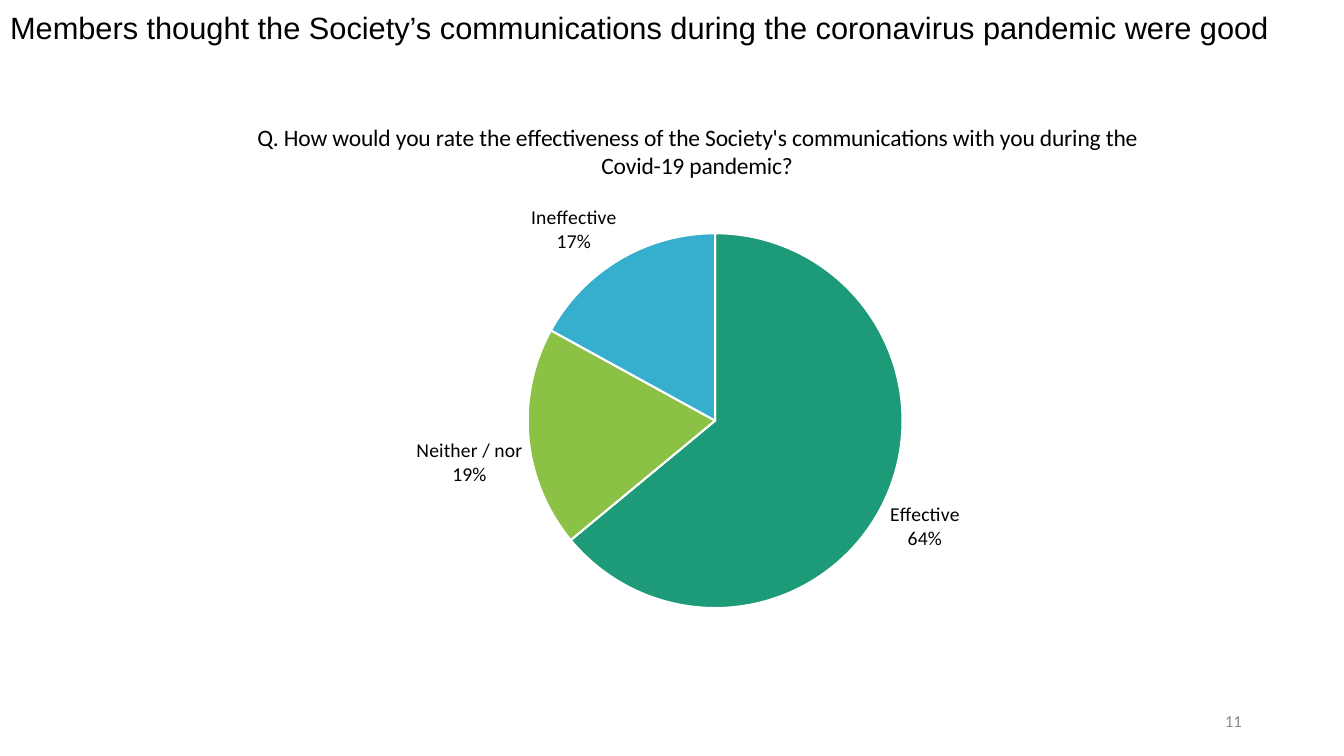
import pptx
import pptx.chart.data
import pptx.dml.color
import pptx.enum.chart
import pptx.enum.text
import pptx.oxml
import pptx.oxml.ns
import pptx.util

RGBColor = pptx.dml.color.RGBColor
BLACK = RGBColor(0x00, 0x00, 0x00)
WHITE = RGBColor(0xFF, 0xFF, 0xFF)
GREY = RGBColor(0x8C, 0x8C, 0x8C)
TEAL = RGBColor(0x1D, 0x9A, 0x78)
LIME = RGBColor(0x8B, 0xC1, 0x45)
SKY = RGBColor(0x36, 0xAF, 0xCE)

PX_PER_INCH = 100.8
RATINGS = [("Effective", 64, TEAL), ("Neither / nor", 19, LIME), ("Ineffective", 17, SKY)]
QUESTION = ("Q. How would you rate the effectiveness of the Society's "
            "communications with you during the Covid-19 pandemic?")


def px(length):
    """Turn a length in pixels into EMU."""
    return pptx.util.Inches(length / PX_PER_INCH)


def style_font(font, size, name="Calibri", color=BLACK):
    """Give a font its size, typeface and colour, without bold."""
    font.size = pptx.util.Pt(size)
    font.name = name
    font.bold = False
    font.color.rgb = color


def write_text(frame, text, size, align=pptx.enum.text.PP_ALIGN.LEFT, spacing=None, **font):
    """Write one vertically centred paragraph into a text frame."""
    frame.word_wrap = True
    frame.auto_size = pptx.enum.text.MSO_AUTO_SIZE.NONE
    frame.vertical_anchor = pptx.enum.text.MSO_ANCHOR.MIDDLE
    paragraph = frame.paragraphs[0]
    paragraph.alignment = align
    paragraph.line_spacing = spacing
    run = paragraph.add_run()
    run.text = text
    style_font(run.font, size, **font)


def set_layout(parent, **fractions):
    """Fix the place of a chart part as fractions of the chart box."""
    modes = '<c:layoutTarget val="inner"/>' if "w" in fractions else ""
    modes += '<c:xMode val="edge"/><c:yMode val="edge"/>'
    values = "".join(f'<c:{key} val="{value}"/>' for key, value in fractions.items())
    layout = pptx.oxml.parse_xml(
        f'<c:layout {pptx.oxml.ns.nsdecls("c")}>'
        f"<c:manualLayout>{modes}{values}</c:manualLayout></c:layout>")
    for old in parent.findall(pptx.oxml.ns.qn("c:layout")):
        parent.remove(old)
    text = parent.find(pptx.oxml.ns.qn("c:tx"))
    parent.insert(0 if text is None else 1, layout)


def place_headline(slide, left, top, width, height):
    """Fill the title placeholder across the given box."""
    headline = slide.shapes.title
    headline.left, headline.top = px(left), px(top)
    headline.width, headline.height = px(width), px(height)
    write_text(headline.text_frame,
               "Members thought the Society’s communications during the "
               "coronavirus pandemic were good", 22, spacing=0.9, name="Arial")


def place_ratings_pie(slide, left, top, width, height):
    """Draw the pie of ratings with its question in the given box."""
    data = pptx.chart.data.CategoryChartData(number_format="General")
    data.categories = [label for label, _, _ in RATINGS]
    data.add_series("Series 1", [share for _, share, _ in RATINGS])
    pie = slide.shapes.add_chart(pptx.enum.chart.XL_CHART_TYPE.PIE, px(left), px(top),
                                 px(width), px(height), data).chart
    style_font(pie.font, 14)
    pie.has_legend = False

    question = pie.chart_title.text_frame.paragraphs[0].add_run()
    question.text = QUESTION
    style_font(question.font, 16.8)
    pie.chart_title.include_in_layout = False
    set_layout(pie.chart_title._element, x=0.13, y=0.04)

    diameter, pie_left, pie_top = 376, 427, 137
    set_layout(pie.plots[0]._element.getparent(),
               x=round(pie_left / width, 2), y=round(pie_top / height, 2),
               w=round(diameter / width, 2), h=round(diameter / height, 2))

    plot = pie.plots[0]
    plot.vary_by_categories = True
    for index, (_, _, color) in enumerate(RATINGS):
        slice_format = plot.series[0].points[index].format
        slice_format.fill.solid()
        slice_format.fill.fore_color.rgb = color
        slice_format.line.color.rgb = WHITE
        slice_format.line.width = pptx.util.Pt(1.5)

    labels = plot.series[0].data_labels
    labels.show_category_name = True
    labels.show_percentage = True
    labels.show_value = False
    labels.number_format = "0%"
    labels.number_format_is_linked = False
    labels.position = pptx.enum.chart.XL_LABEL_POSITION.OUTSIDE_END
    style_font(labels.font, 14)
    separator = pptx.oxml.parse_xml(
        f'<c:separator {pptx.oxml.ns.nsdecls("c")}>\n</c:separator>')
    labels._element.find(pptx.oxml.ns.qn("c:showBubbleSize")).addnext(separator)


def place_page_number(slide, left, top, width, height):
    """Set the page number at the right of the given box."""
    page_number = slide.shapes.add_textbox(px(left), px(top), px(width), px(height))
    write_text(page_number.text_frame, "11", 12,
               align=pptx.enum.text.PP_ALIGN.RIGHT, color=GREY)


def main():
    """Build the slide and save it."""
    deck = pptx.Presentation()
    deck.slide_width, deck.slide_height = px(1344), px(756)
    slide = deck.slides.add_slide(deck.slide_layouts[5])
    place_headline(slide, 0, 0, 1344, 60)
    place_ratings_pie(slide, 99, 96, 1185, 528)
    place_page_number(slide, 950, 701, 302, 40)
    deck.save("out.pptx")


if __name__ == "__main__":
    main()
